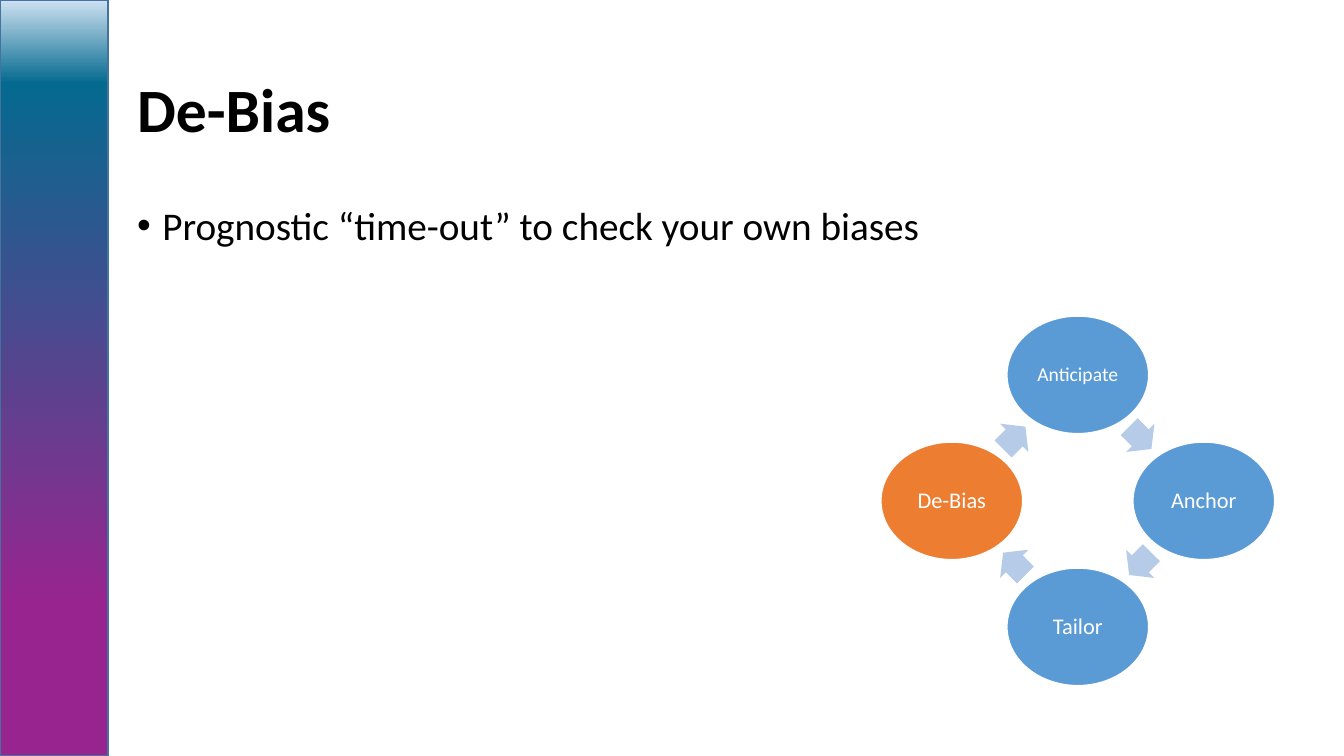
from copy import deepcopy

from pptx import Presentation
from pptx.dml.color import RGBColor
from pptx.enum.shapes import MSO_SHAPE as SHAPE
from pptx.enum.text import MSO_ANCHOR as ANCHOR, MSO_AUTO_SIZE as AUTO_SIZE, PP_ALIGN as ALIGN
from pptx.oxml.ns import qn
from pptx.oxml.xmlchemy import OxmlElement
from pptx.util import Pt

PX = 9525  # EMU per px, 96 px to the inch
FONT = "Calibri"
BLACK, WHITE = "000000", "FFFFFF"
BLUE, ORANGE, PALE_BLUE = "5B9BD5", "ED7D31", "B5CBE7"

# Cycle geometry in px
CENTER_X, CENTER_Y, RADIUS = 1026, 477, 120
NODE_W, NODE_H = 135, 112
ARROW_W, ARROW_H = 30, 38

# Steps clockwise from the top: label, size, fill, direction from the center
STEPS = [
    ("Anticipate", 14, BLUE, (0, -1)),
    ("Anchor", 16, BLUE, (1, 0)),
    ("Tailor", 16, BLUE, (0, 1)),
    ("De-Bias", 16, ORANGE, (-1, 0)),
]


def rgb(value):
    return RGBColor.from_string(value)


def write(paragraph, text, size, color, align, bold=False):
    paragraph.alignment = align
    paragraph.line_spacing = 0.9
    paragraph.space_before = Pt(0)
    run = paragraph.add_run()
    run.text = text
    run.font.name = FONT
    run.font.size = Pt(size)
    run.font.bold = bold
    run.font.color.rgb = rgb(color)


def place(placeholder, x, y, w, h, anchor):
    placeholder.left, placeholder.top = x * PX, y * PX
    placeholder.width, placeholder.height = w * PX, h * PX
    frame = placeholder.text_frame
    frame.word_wrap = True
    frame.auto_size = AUTO_SIZE.NONE
    frame.vertical_anchor = anchor
    return frame.paragraphs[0]


def add_bullet(paragraph, indent):
    properties = paragraph._p.get_or_add_pPr()
    properties.set("marL", str(indent * PX))
    properties.set("indent", str(-indent * PX))
    for tag, attribute, value in (("a:buFont", "typeface", "Arial"), ("a:buChar", "char", "•")):
        mark = OxmlElement(tag)
        mark.set(attribute, value)
        properties.append(mark)


def add_plain_shape(slide, kind, x, y, w, h):
    shape = slide.shapes.add_shape(kind, x * PX, y * PX, w * PX, h * PX)
    shape.shadow.inherit = False
    return shape


def add_side_bar(slide):
    bar = add_plain_shape(slide, SHAPE.RECTANGLE, 0, 0, 103, 720)
    bar.line.color.rgb = rgb("43739E")
    bar.line.width = Pt(1)
    bar.fill.gradient()
    bar.fill.gradient_angle = 90
    # The default gradient has two stops; a third is needed
    stop_list = bar._element.spPr.find(".//" + qn("a:gsLst"))
    stop_list.append(deepcopy(stop_list[-1]))
    colors = [(0.2, "98258F"), (0.89, "056A8F"), (1, "CEE1F2")]
    for stop, (position, color) in zip(bar.fill.gradient_stops, colors):
        stop.position = position
        stop.color.rgb = rgb(color)


def add_node(slide, x, y, label, size, color):
    node = add_plain_shape(slide, SHAPE.OVAL, x - NODE_W // 2, y - NODE_H // 2, NODE_W, NODE_H)
    node.fill.solid()
    node.fill.fore_color.rgb = rgb(color)
    node.line.color.rgb = rgb(WHITE)
    node.line.width = Pt(1)
    frame = node.text_frame
    frame.word_wrap = True
    frame.vertical_anchor = ANCHOR.MIDDLE
    frame.margin_left = frame.margin_right = 2 * PX
    frame.margin_top = frame.margin_bottom = 2 * PX
    write(frame.paragraphs[0], label, size, WHITE, ALIGN.CENTER)


def add_arrow(slide, x, y, rotation):
    arrow = add_plain_shape(slide, SHAPE.RIGHT_ARROW, x - ARROW_W // 2, y - ARROW_H // 2,
                            ARROW_W, ARROW_H)
    arrow.adjustments[0], arrow.adjustments[1] = 0.6, 0.5
    arrow.rotation = rotation
    arrow.fill.solid()
    arrow.fill.fore_color.rgb = rgb(PALE_BLUE)
    arrow.line.fill.background()


def add_cycle(slide):
    for index, (label, size, color, (dx, dy)) in enumerate(STEPS):
        add_node(slide, CENTER_X + dx * RADIUS, CENTER_Y + dy * RADIUS, label, size, color)
        # Each arrow sits halfway to the next step
        next_dx, next_dy = STEPS[(index + 1) % len(STEPS)][3]
        add_arrow(slide, CENTER_X + (dx + next_dx) * RADIUS // 2,
                  CENTER_Y + (dy + next_dy) * RADIUS // 2, 45 + 90 * index)


def main():
    deck = Presentation()
    deck.slide_width, deck.slide_height = 1280 * PX, 720 * PX
    slide = deck.slides.add_slide(deck.slide_layouts[1])

    add_side_bar(slide)

    # Title and list
    title = place(slide.shapes.title, 121, 38, 1117, 139, ANCHOR.MIDDLE)
    write(title, "De-Bias", 44, BLACK, ALIGN.LEFT, bold=True)
    advice = place(slide.placeholders[1], 121, 192, 1118, 513, ANCHOR.TOP)
    add_bullet(advice, 24)
    write(advice, "Prognostic “time-out” to check your own biases", 28, BLACK, ALIGN.LEFT)

    add_cycle(slide)
    deck.save("out.pptx")


if __name__ == "__main__":
    main()
